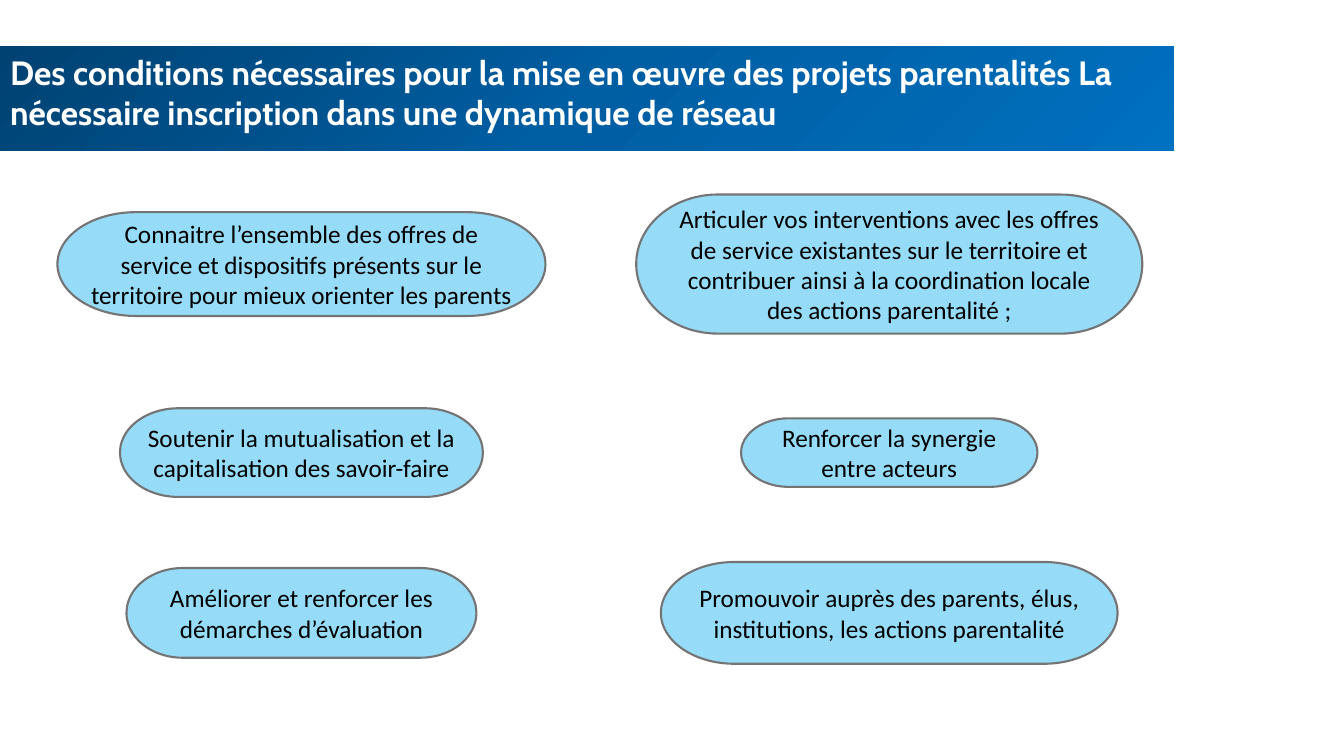
"""Build the slide on the conditions for running parenting projects in a network."""
from copy import deepcopy

from pptx import Presentation
from pptx import util as u
from pptx.dml.color import RGBColor
from pptx.enum import shapes, text
from pptx.oxml.ns import qn

COLUMN_CENTERS = (2.99, 8.82)
ROW_CENTERS = (2.62, 4.49, 6.08)
CONDITIONS = (
    (
        (4.84, 1.03, "Connaitre l’ensemble des offres de service et dispositifs présents "
                     "sur le territoire pour mieux orienter les parents"),
        (5.02, 1.38, "Articuler vos interventions avec les offres de service existantes "
                     "sur le territoire et contribuer ainsi à la coordination locale "
                     "des actions parentalité ;"),
    ),
    (
        (3.6, 0.88, "Soutenir la mutualisation et la capitalisation des savoir-faire"),
        (2.94, 0.68, "Renforcer la synergie entre acteurs"),
    ),
    (
        (3.47, 0.89, "Améliorer et renforcer les démarches d’évaluation"),
        (4.53, 1.01, "Promouvoir auprès des parents, élus, institutions, "
                     "les actions parentalité"),
    ),
)


def color(hex_string):
    return RGBColor.from_string(hex_string)


class SlideBuilder:
    title_font = "Cabin"
    body_font = "Calibri"
    banner_colors = ("004272", "005EA2", "0070C0")
    bubble_fill = "96DCF8"
    bubble_line = "747474"

    def __init__(self, presentation):
        self.slide = presentation.slides.add_slide(presentation.slide_layouts[5])

    def label(self, shape, words, font_name, size, font_color, alignment, anchor, bold=False):
        frame = shape.text_frame
        frame.text = words
        frame.word_wrap = True
        frame.auto_size = text.MSO_AUTO_SIZE.NONE
        frame.vertical_anchor = anchor
        paragraph = frame.paragraphs[0]
        paragraph.alignment = alignment
        paragraph.font.name = font_name
        paragraph.font.size = u.Pt(size)
        paragraph.font.bold = bold
        paragraph.font.color.rgb = color(font_color)

    def title(self, left, top, width, height, words):
        title = self.slide.shapes.title
        title.left, title.top = u.Inches(left), u.Inches(top)
        title.width, title.height = u.Inches(width), u.Inches(height)
        title.fill.gradient()
        title.fill.gradient_angle = 315
        stop_list = title.element.spPr.find(qn("a:gradFill")).find(qn("a:gsLst"))
        stop_list.insert(1, deepcopy(stop_list[0]))
        for index, (stop, shade) in enumerate(zip(title.fill.gradient_stops, self.banner_colors)):
            stop.position = index / 2
            stop.color.rgb = color(shade)
        self.label(title, words, self.title_font, 24, "FFFFFF",
                   text.PP_ALIGN.LEFT, text.MSO_ANCHOR.TOP, bold=True)

    def bubble(self, center_x, center_y, width, height, words):
        bubble = self.slide.shapes.add_shape(
            shapes.MSO_SHAPE.FLOWCHART_TERMINATOR,
            u.Inches(center_x - width / 2), u.Inches(center_y - height / 2),
            u.Inches(width), u.Inches(height))
        bubble.shadow.inherit = False
        bubble.fill.solid()
        bubble.fill.fore_color.rgb = color(self.bubble_fill)
        bubble.line.color.rgb = color(self.bubble_line)
        bubble.line.width = u.Pt(1.5)
        self.label(bubble, words, self.body_font, 18, "000000",
                   text.PP_ALIGN.CENTER, text.MSO_ANCHOR.MIDDLE)


def main():
    presentation = Presentation()
    presentation.slide_width = u.Inches(13.33)
    presentation.slide_height = u.Inches(7.5)
    builder = SlideBuilder(presentation)
    builder.title(0, 0.46, 11.64, 1.03,
                  "Des conditions nécessaires pour la mise en œuvre des projets parentalités "
                  "La nécessaire inscription dans une dynamique de réseau")
    for center_y, row in zip(ROW_CENTERS, CONDITIONS):
        for center_x, (width, height, words) in zip(COLUMN_CENTERS, row):
            builder.bubble(center_x, center_y, width, height, words)
    presentation.save("out.pptx")


if __name__ == "__main__":
    main()
